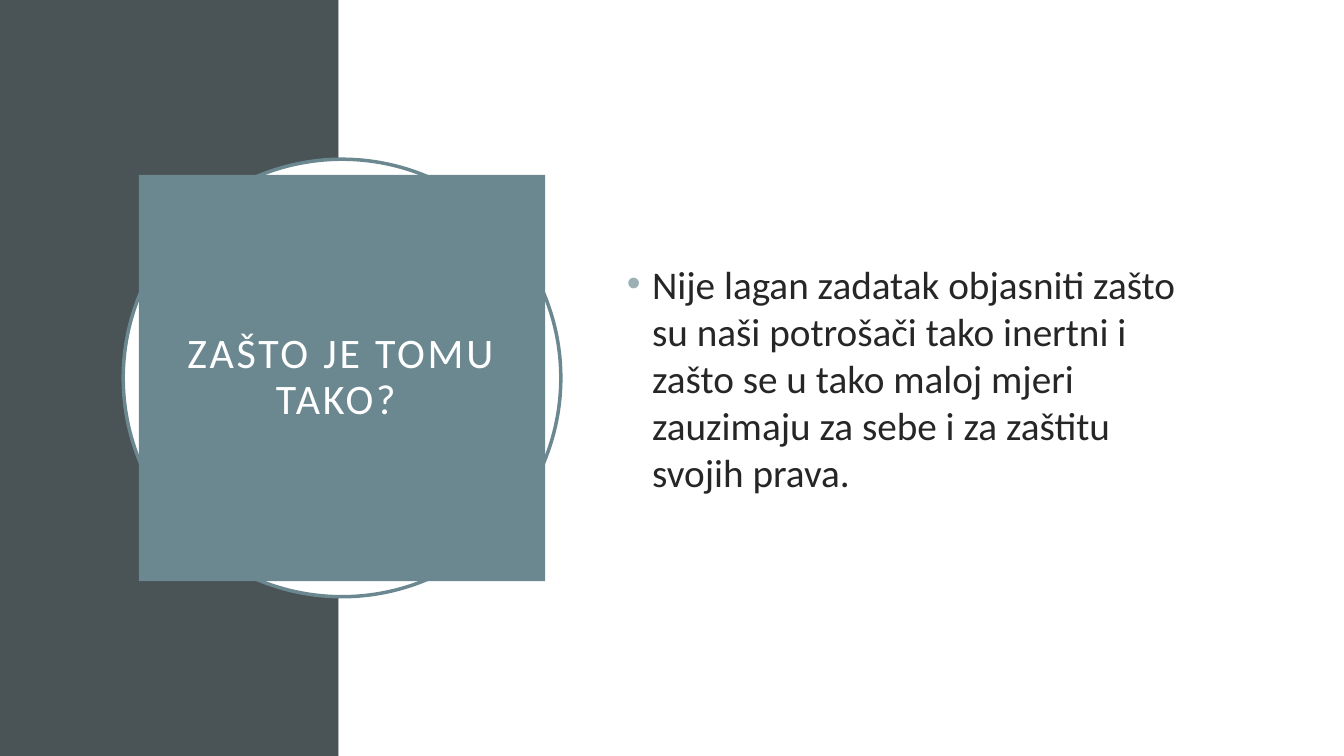
import pptx
import pptx.dml.color
import pptx.enum.shapes
import pptx.enum.text
import pptx.util
from lxml import etree
from pptx.oxml.ns import qn

RGBColor = pptx.dml.color.RGBColor
Shape = pptx.enum.shapes.MSO_SHAPE
Align = pptx.enum.text.PP_ALIGN

SLATE = RGBColor(0x4A, 0x53, 0x56)
TEAL = RGBColor(0x6B, 0x88, 0x91)
PALE_TEAL = RGBColor(0x9B, 0xAF, 0xB5)
WHITE = RGBColor(0xFF, 0xFF, 0xFF)
INK = RGBColor(0x26, 0x26, 0x26)

PANEL_EDGE = 25.2
BADGE_CENTRE = 25.45


class SlideBuilder:
    """Lengths are percentages of the slide's width or height."""

    font_name = "Calibri"

    def __init__(self, presentation):
        self.width = presentation.slide_width
        self.height = presentation.slide_height
        self.slide = presentation.slides.add_slide(presentation.slide_layouts[6])

    def box(self, left, top, width, height):
        return (round(self.width * left / 100), round(self.height * top / 100),
                round(self.width * width / 100), round(self.height * height / 100))

    def shape(self, kind, box, fill, line=None):
        shape = self.slide.shapes.add_shape(kind, *box)
        shape.shadow.inherit = False
        shape.fill.solid()
        shape.fill.fore_color.rgb = fill
        if line is None:
            shape.line.fill.background()
        else:
            shape.line.color.rgb = line
            shape.line.width = pptx.util.Pt(2.5)
        return shape

    def panel(self, left, width, fill):
        return self.shape(Shape.RECTANGLE, self.box(left, 0, width, 100), fill)

    def badge(self, kind, size, fill, line=None):
        """Add a shape as wide as high, centred on the badge; size is a share of the height."""
        side = round(self.height * size / 100)
        left = round(self.width * BADGE_CENTRE / 100 - side / 2)
        top = round((self.height - side) / 2)
        return self.shape(kind, (left, top, side, side), fill, line)

    def text_box(self, left, top, width, height):
        return self.slide.shapes.add_textbox(*self.box(left, top, width, height))

    def add_text(self, shape, text, size, color, align=Align.LEFT, spacing=1.0,
                 tracking=None, bullet=None):
        """Fill a shape with one vertically centred paragraph."""
        frame = shape.text_frame
        frame.word_wrap = True
        frame.vertical_anchor = pptx.enum.text.MSO_ANCHOR.MIDDLE
        paragraph = frame.paragraphs[0]
        paragraph.alignment = align
        paragraph.line_spacing = spacing
        if bullet is not None:
            self.add_bullet(paragraph, bullet)
        run = paragraph.add_run()
        run.text = text
        run.font.name = self.font_name
        run.font.size = pptx.util.Pt(size)
        run.font.color.rgb = color
        if tracking is not None:
            run.font._element.set("spc", str(tracking * 100))
        return frame

    def add_bullet(self, paragraph, color):
        properties = paragraph._p.get_or_add_pPr()
        indent = pptx.util.Inches(0.25)
        properties.set("marL", str(indent))
        properties.set("indent", str(-indent))
        bullet_color = etree.SubElement(properties, qn("a:buClr"))
        etree.SubElement(bullet_color, qn("a:srgbClr")).set("val", str(color))
        etree.SubElement(properties, qn("a:buFont")).set("typeface", "Arial")
        etree.SubElement(properties, qn("a:buChar")).set("char", "•")


def main():
    presentation = pptx.Presentation()
    presentation.slide_width = pptx.util.Inches(13.33)
    presentation.slide_height = pptx.util.Inches(7.5)
    builder = SlideBuilder(presentation)

    builder.panel(0, PANEL_EDGE, SLATE)
    builder.panel(PANEL_EDGE, 100 - PANEL_EDGE, WHITE)

    builder.badge(Shape.OVAL, 57.87, WHITE, TEAL)
    title = builder.badge(Shape.RECTANGLE, 53.73, TEAL)
    frame = builder.add_text(title, "ZAŠTO JE TOMU TAKO? ", 30, WHITE,
                             align=Align.CENTER, spacing=0.9, tracking=2)
    frame.margin_left = frame.margin_right = pptx.util.Inches(0.2)
    frame.margin_top = frame.margin_bottom = pptx.util.Inches(0.2)

    body = builder.text_box(45.91, 20.4, 43.66, 59.07)
    builder.add_text(body, "Nije lagan zadatak objasniti zašto su naši potrošači tako inertni "
                     "i zašto se u tako maloj mjeri zauzimaju za sebe i za zaštitu svojih prava.",
                     28, INK, bullet=PALE_TEAL)

    presentation.save("out.pptx")


if __name__ == "__main__":
    main()
